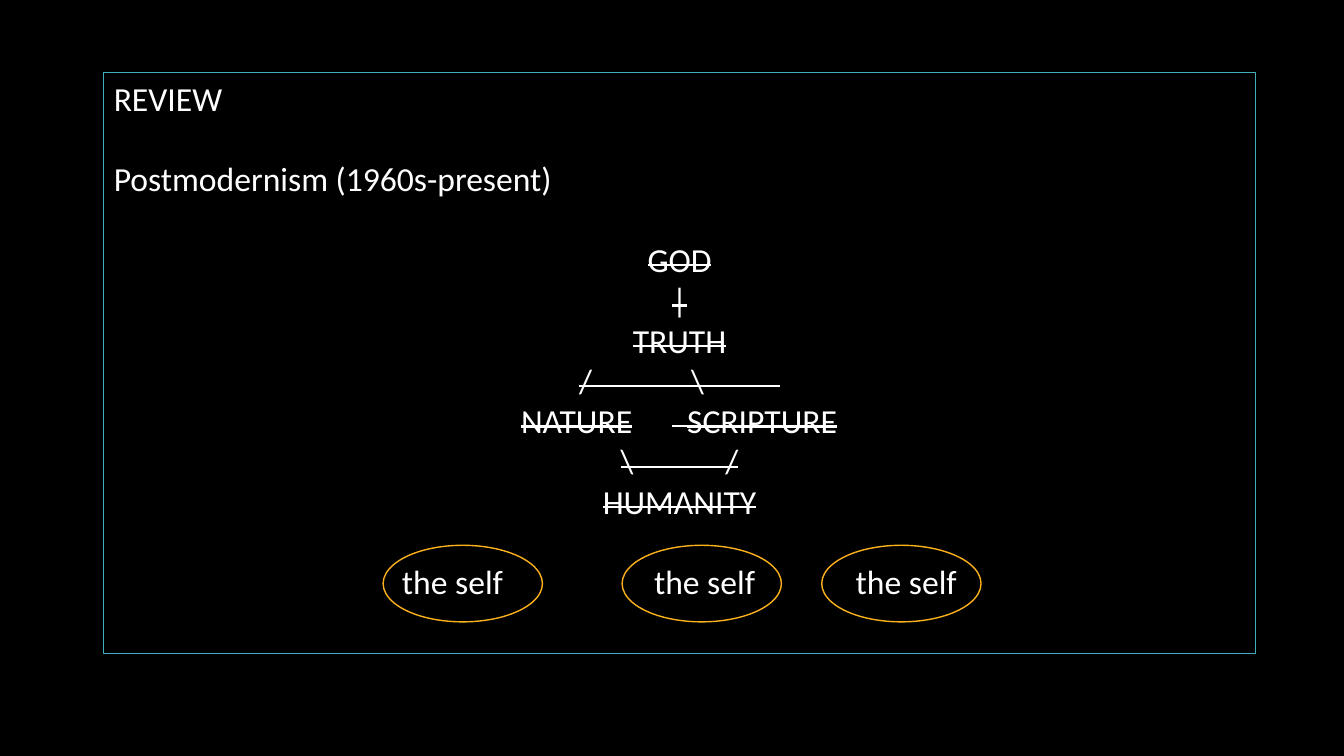
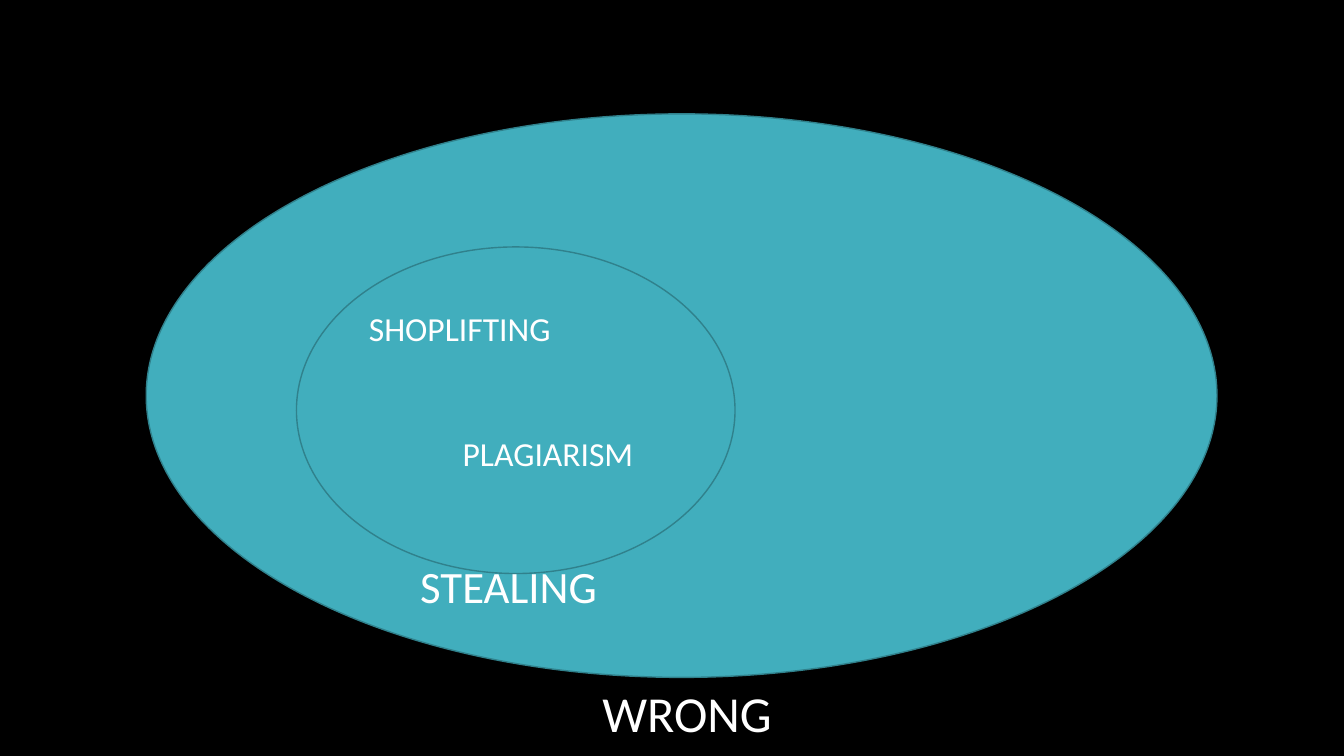
from dataclasses import dataclass

from lxml.etree import SubElement
from pptx import Presentation
from pptx.dml.color import RGBColor
from pptx.enum.shapes import MSO_CONNECTOR, MSO_SHAPE
from pptx.enum.text import MSO_ANCHOR, PP_ALIGN
from pptx.oxml.ns import qn
from pptx.util import Emu, Pt

PX = 9144


def px(length):
    return Emu(length * PX)


@dataclass(frozen=True)
class Theme:
    font: str = "Calibri"
    background: str = "000000"
    text: str = "FFFFFF"
    teal: str = "41AEBD"
    dark_teal: str = "30818C"
    amber: str = "FCB11C"
    body: int = 24
    large: int = 32
    largest: int = 36
    gap: float = 28.8
    frame_line: float = 0.75
    outline: float = 1
    strike_line: float = 1.5


def write(para, text, *, theme, size, align=PP_ALIGN.LEFT, before=0, strike=False, stops=()):
    if stops:
        tabs = SubElement(para._p.get_or_add_pPr(), qn("a:tabLst"))
        for stop in stops:
            SubElement(tabs, qn("a:tab"), pos=str(px(stop)), algn="ctr")
    para.alignment = align
    para.space_before = Pt(before)
    pieces = [(text, strike)]
    if stops:
        pieces = [piece for word in text.split("\t") for piece in (("\t", False), (word, strike))]
    for words, struck in pieces:
        span = para.add_run()
        span.text = words
        span.font.name = theme.font
        span.font.size = Pt(size)
        span.font.color.rgb = RGBColor.from_string(theme.text)
        if struck:
            span._r.get_or_add_rPr().set("strike", "sngStrike")


class Painter:
    def __init__(self, deck, theme):
        self.deck = deck
        self.theme = theme
        self.page = None

    def new_page(self):
        self.page = self.deck.slides.add_slide(self.deck.slide_layouts[6])
        fill = self.page.background.fill
        fill.solid()
        fill.fore_color.rgb = RGBColor.from_string(self.theme.background)

    def shape(self, kind, left, top, width, height, *, line, weight, fill=None):
        box = self.page.shapes.add_shape(kind, px(left), px(top), px(width), px(height))
        box.shadow.inherit = False
        if fill:
            box.fill.solid()
            box.fill.fore_color.rgb = RGBColor.from_string(fill)
        else:
            box.fill.background()
        box.line.color.rgb = RGBColor.from_string(line)
        box.line.width = Pt(weight)
        return box

    def ellipse(self, left, top, width, height, *, line, fill=None):
        return self.shape(MSO_SHAPE.OVAL, left, top, width, height,
                          line=line, weight=self.theme.outline, fill=fill)

    def framed_text(self, left, top, width, height, lines):
        box = self.shape(MSO_SHAPE.RECTANGLE, left, top, width, height,
                         line=self.theme.teal, weight=self.theme.frame_line)
        frame = box.text_frame
        frame.word_wrap = True
        frame.vertical_anchor = MSO_ANCHOR.TOP
        for index, (text, style) in enumerate(lines):
            para = frame.add_paragraph() if index else frame.paragraphs[0]
            write(para, text, theme=self.theme, size=self.theme.body, **style)

    def label(self, text, left, top, width, height, *, size, align=PP_ALIGN.LEFT):
        box = self.page.shapes.add_textbox(px(left), px(top), px(width), px(height))
        box.text_frame.word_wrap = True
        write(box.text_frame.paragraphs[0], text, theme=self.theme, size=size, align=align)

    def strike_rule(self, left, right, top):
        rule = self.page.shapes.add_connector(
            MSO_CONNECTOR.STRAIGHT, px(left), px(top), px(right), px(top))
        rule.line.color.rgb = RGBColor.from_string(self.theme.text)
        rule.line.width = Pt(self.theme.strike_line)
        SubElement(rule._element.spPr, qn("a:effectLst"))


def review_page(painter):
    theme = painter.theme
    painter.new_page()
    struck = {"strike": True, "align": PP_ALIGN.CENTER}
    painter.framed_text(103, 72, 1142, 576, [
        ("REVIEW", {}),
        ("Postmodernism (1960s-present)", {"before": theme.gap}),
        ("GOD", {**struck, "before": theme.gap}),
        ("|", struck),
        ("TRUTH", struck),
        ("/\t\\", {"strike": True, "stops": (468, 579)}),
        ("NATURE\tSCRIPTURE", {"strike": True, "stops": (459, 643)}),
        ("\\\t/", {"strike": True, "stops": (509, 613)}),
        ("HUMANITY", struck),
        ("the self\tthe self\tthe self", {"before": theme.gap, "stops": (336, 586, 786)}),
    ])
    for left, right, top in ((574, 774, 383), (667, 682, 423), (617, 732, 463)):
        painter.strike_rule(left, right, top)
    for left in (380, 617, 815):
        painter.ellipse(left, 541, 158, 76, line=theme.amber)


def wrong_page(painter):
    theme = painter.theme
    painter.new_page()
    for place in ((145, 113, 1062, 559), (294, 245, 435, 324)):
        painter.ellipse(*place, line=theme.dark_teal, fill=theme.teal)
    painter.label("SHOPLIFTING", 356, 301, 225, 50, size=theme.body)
    painter.label("PLAGIARISM", 449, 425, 225, 50, size=theme.body)
    painter.label("STEALING", 366, 549, 277, 64, size=theme.large, align=PP_ALIGN.CENTER)
    painter.label("WRONG", 414, 672, 535, 71, size=theme.largest, align=PP_ALIGN.CENTER)


def main():
    deck = Presentation()
    deck.slide_width, deck.slide_height = px(1333), px(750)
    painter = Painter(deck, Theme())
    review_page(painter)
    wrong_page(painter)
    deck.save("out.pptx")


if __name__ == "__main__":
    main()
